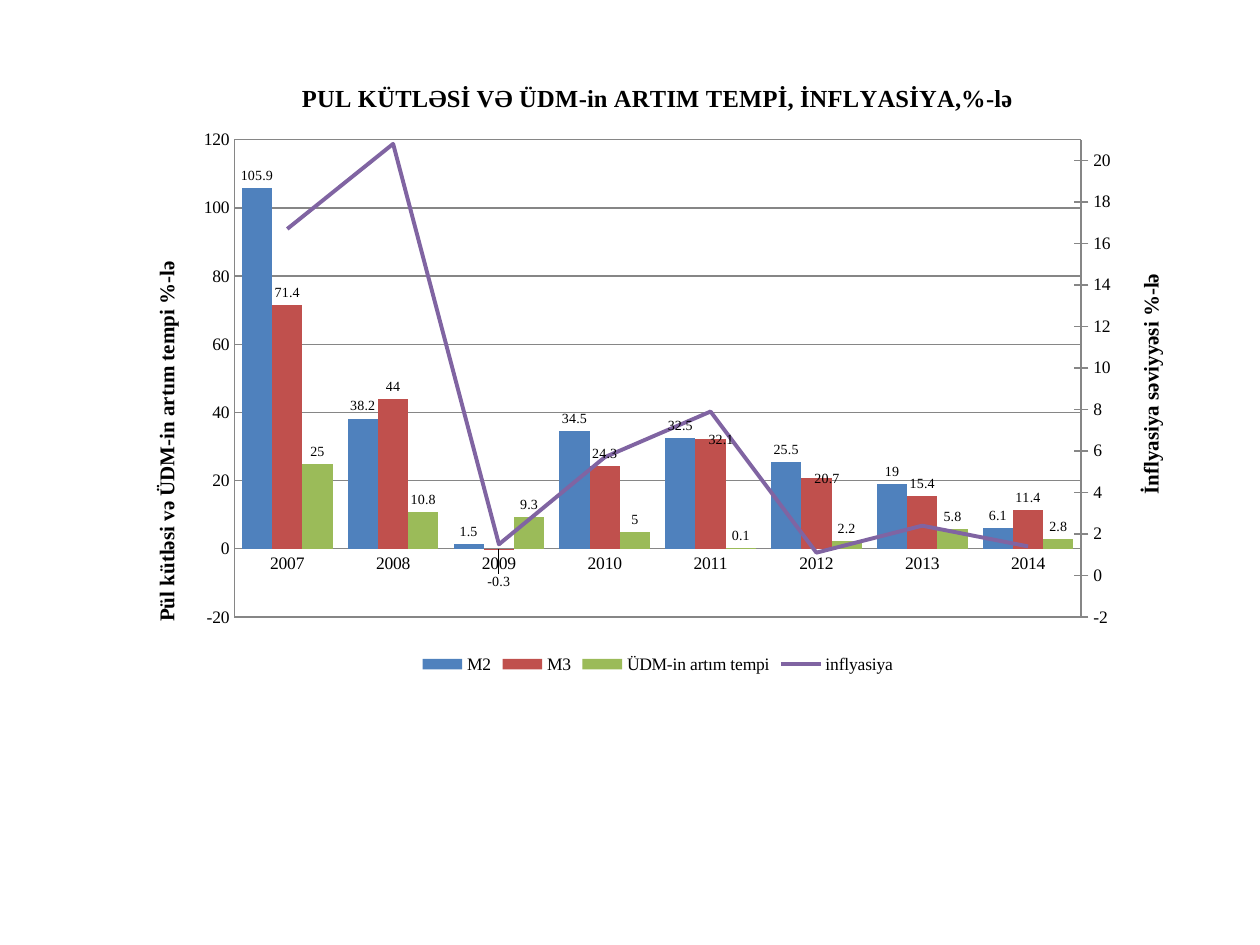
"""Builds a slide with a chart of money supply, GDP growth and inflation."""
from dataclasses import dataclass

from pptx import Presentation
from pptx.chart.axis import ValueAxis
from pptx.chart.data import CategoryChartData
from pptx.dml.color import RGBColor
from pptx.enum.chart import XL_CHART_TYPE, XL_LABEL_POSITION, XL_LEGEND_POSITION, XL_TICK_MARK
from pptx.oxml import parse_xml
from pptx.oxml.ns import nsdecls
from pptx.util import Inches, Pt


@dataclass(frozen=True)
class Theme:
    font: str = "Times New Roman"
    ink: str = "000000"
    grid: str = "868686"
    fills: tuple = ("4F81BD", "C0504D", "9BBB59", "8064A2")
    title: int = 14
    axis: int = 12
    body: int = 10
    label: int = 8


theme = Theme()


def write(frame, text, size=theme.body, bold=True):
    frame.text = text
    font = frame.paragraphs[0].runs[0].font
    font.name, font.size, font.bold = theme.font, Pt(size), bold
    font.color.rgb = RGBColor.from_string(theme.ink)


def place(parent, index, inner=False, **spots):
    for old in parent.xpath("c:layout"):
        parent.remove(old)
    target = '<c:layoutTarget val="inner"/>' if inner else ""
    modes = "" if parent.tag.endswith("dLbl") else '<c:xMode val="edge"/><c:yMode val="edge"/>'
    sizes = "".join(f'<c:{key} val="{val}"/>' for key, val in spots.items())
    parent.insert(index, parse_xml(
        f'<c:layout {nsdecls("c")}><c:manualLayout>{target}{modes}{sizes}'
        "</c:manualLayout></c:layout>"))


deck = Presentation()
deck.slide_width, deck.slide_height = Inches(10), Inches(7.5)
slide = deck.slides.add_slide(deck.slide_layouts[6])

data = CategoryChartData()
data.categories = [str(year) for year in range(2007, 2015)]
data.add_series("M2", (105.9, 38.2, 1.5, 34.5, 32.5, 25.5, 19, 6.1))
data.add_series("M3", (71.4, 44, -0.3, 24.3, 32.1, 20.7, 15.4, 11.4))
data.add_series("ÜDM-in artım tempi", (25, 10.8, 9.3, 5, 0.1, 2.2, 5.8, 2.8))
data.add_series("inflyasiya", (16.7, 20.8, 1.5, 5.7, 7.9, 1.1, 2.4, 1.4))
chart = slide.shapes.add_chart(
    XL_CHART_TYPE.COLUMN_CLUSTERED, Inches(1.02), Inches(0.47),
    Inches(8.4), Inches(4.92), data).chart
chart.font.name, chart.font.size = theme.font, Pt(theme.body)
chart.font.color.rgb = RGBColor.from_string(theme.ink)
write(chart.chart_title.text_frame,
      "PUL KÜTLƏSİ VƏ ÜDM-in ARTIM TEMPİ, İNFLYASİYA,%-lə", size=theme.title)
chart.has_legend = True
chart.legend.position = XL_LEGEND_POSITION.BOTTOM
chart.legend.include_in_layout = False

bars = chart.plots[0]
bars.gap_width, bars.overlap, bars.vary_by_categories = 50, 0, False
for series, fill in zip(list(bars.series)[:3], theme.fills):
    series.format.fill.solid()
    series.format.fill.fore_color.rgb = RGBColor.from_string(fill)
    series.invert_if_negative = False
    labels = series.data_labels
    labels.show_value = True
    labels.position = XL_LABEL_POSITION.OUTSIDE_END
    labels.font.size = Pt(theme.label)

root = chart.element
shifts = {2: (0, 0.03), 4: (0.01, 0.02), 5: (0.01, 0.02)}
for index, (across, down) in shifts.items():
    label = bars.series[1].points[index].data_label
    label.position = XL_LABEL_POSITION.OUTSIDE_END
    label.font.size = Pt(theme.label)
    node = root.xpath(f"//c:ser[2]//c:dLbl[c:idx/@val={index}]")[0]
    place(node, 1, x=across, y=down)

area = root.xpath("//c:plotArea")[0]
bar = root.xpath("//c:barChart")[0]
trend = bar.xpath("c:ser")[3]
for flag in trend.xpath("c:invertIfNegative"):
    trend.remove(flag)
line = parse_xml(
    f'<c:lineChart {nsdecls("c")}><c:grouping val="standard"/><c:varyColors val="0"/>'
    '<c:marker val="1"/><c:axId val="5001"/><c:axId val="5002"/></c:lineChart>')
line.insert(2, trend)
bar.addnext(line)
trend.xpath("c:cat")[0].addprevious(
    parse_xml(f'<c:marker {nsdecls("c")}><c:symbol val="none"/></c:marker>'))
stroke = chart.plots[1].series[0]
stroke.smooth = False
stroke.format.line.width = Pt(2.25)
stroke.format.line.color.rgb = RGBColor.from_string(theme.fills[3])

left = chart.value_axis
side = parse_xml(
    f'<c:valAx {nsdecls("c")}><c:axId val="5002"/><c:scaling/><c:delete val="0"/>'
    '<c:axPos val="r"/><c:numFmt formatCode="General" sourceLinked="0"/>'
    '<c:majorTickMark val="cross"/><c:minorTickMark val="none"/>'
    '<c:tickLblPos val="nextTo"/><c:crossAx val="5001"/><c:crosses val="max"/>'
    '<c:crossBetween val="between"/></c:valAx>')
base = parse_xml(
    f'<c:catAx {nsdecls("c")}><c:axId val="5001"/><c:scaling/><c:delete val="1"/>'
    '<c:axPos val="b"/><c:majorTickMark val="none"/><c:minorTickMark val="none"/>'
    '<c:tickLblPos val="nextTo"/><c:crossAx val="5002"/><c:crosses val="autoZero"/></c:catAx>')
root.xpath("//c:valAx")[0].addnext(side)
side.addnext(base)
right = ValueAxis(side)

scales = (
    (left, "Pül kütləsi və ÜDM-in artım tempi %-lə", -20, 120, 20, XL_TICK_MARK.NONE, 0.02, 0.32),
    (right, "İnflyasiya səviyyəsi %-lə", -2, 21, 2, XL_TICK_MARK.CROSS, 0.95, 0.34),
)
for axis, text, low, high, step, tick, across, down in scales:
    axis.minimum_scale, axis.maximum_scale, axis.major_unit = low, high, step
    axis.major_tick_mark = tick
    write(axis.axis_title.text_frame, text, size=theme.axis)
    title = root.xpath("//c:valAx/c:title")[-1]
    title.xpath(".//a:bodyPr")[0].set("rot", "-5400000")
    place(title, 1, x=across, y=down)

left.has_major_gridlines, right.has_major_gridlines = True, False
left.tick_labels.number_format = "General"
left.tick_labels.number_format_is_linked = False
chart.category_axis.major_tick_mark = XL_TICK_MARK.NONE
formats = [axis.format for axis in (left, right, chart.category_axis)]
for form in formats + [left.major_gridlines.format]:
    form.line.width = Pt(0.75)
    form.line.color.rgb = RGBColor.from_string(theme.grid)
place(area, 0, inner=True, x=0.1, y=0.13, w=0.8, h=0.77)

deck.save("out.pptx")
